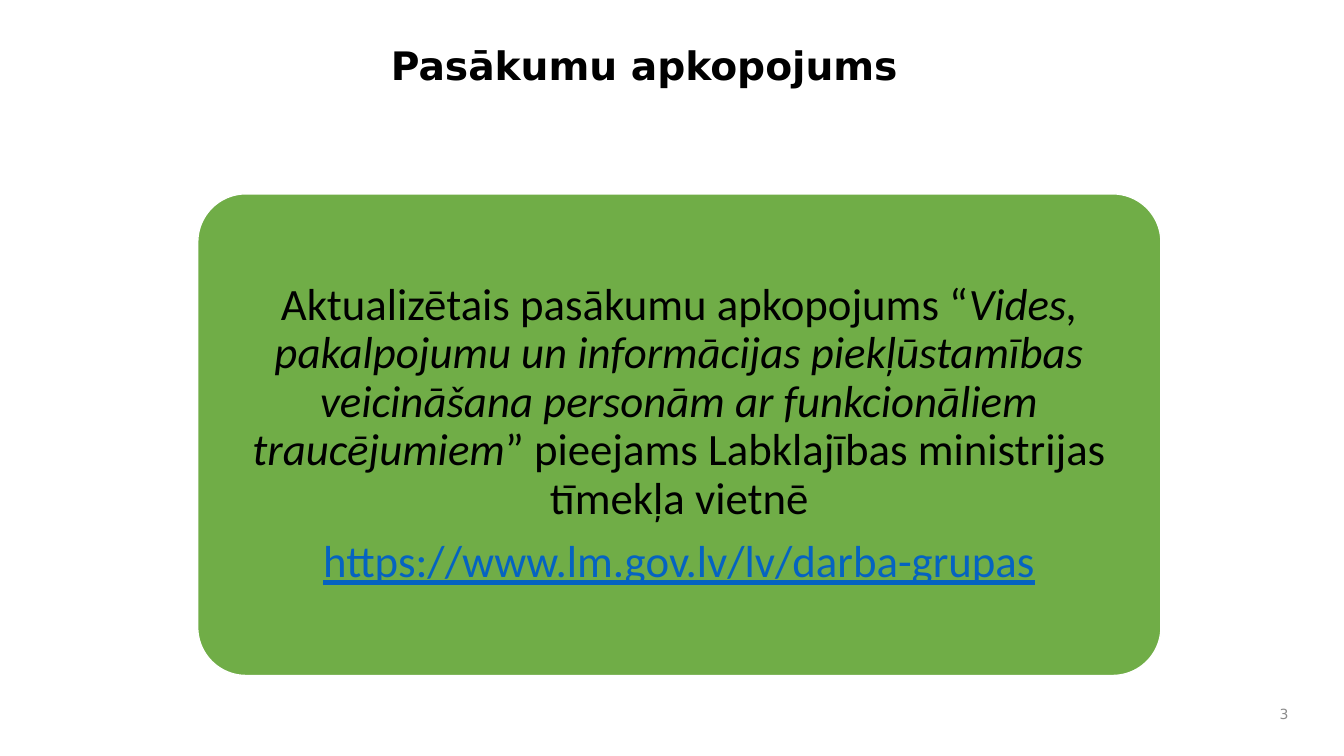
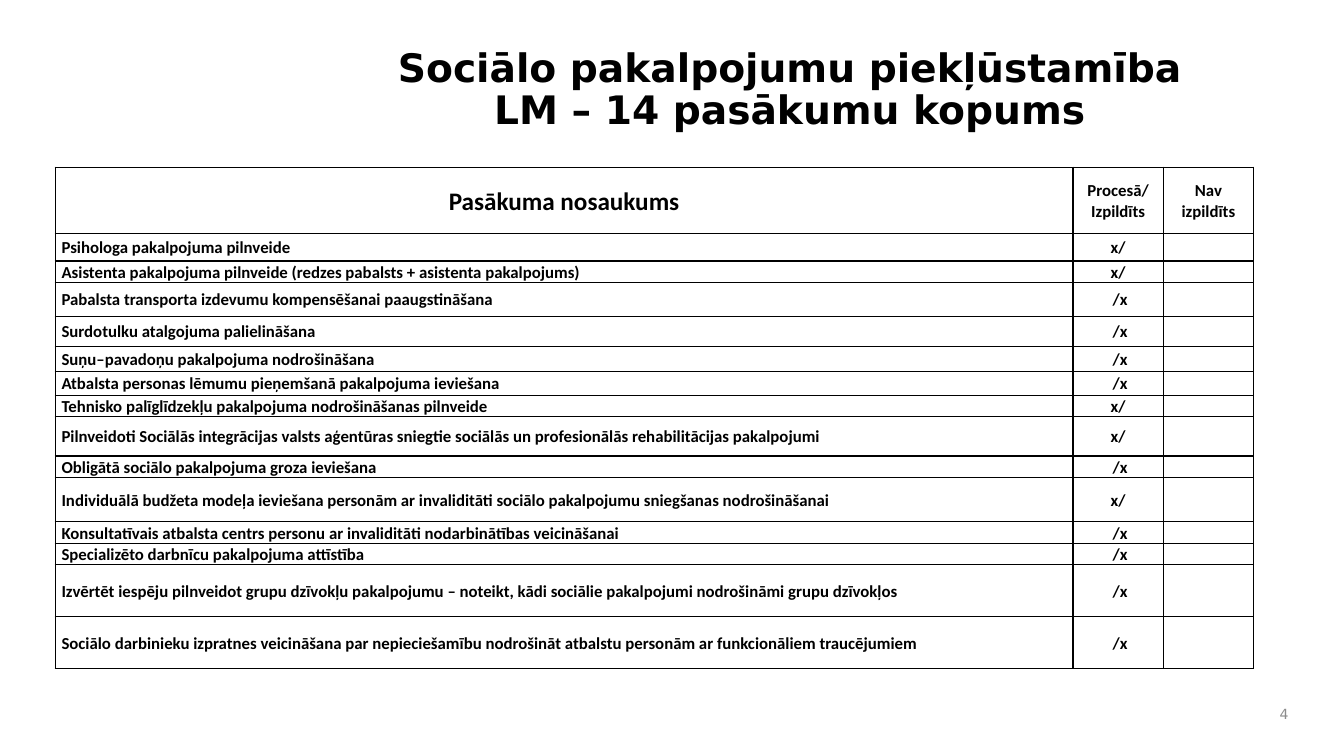
"""Build two slides on accessibility measures: a summary panel and a status table."""
import dataclasses

import lxml.etree
import pptx
import pptx.dml.color
import pptx.enum.shapes
import pptx.enum.text
import pptx.oxml.ns
import pptx.util

Pt = pptx.util.Pt
Align = pptx.enum.text.PP_ALIGN
Anchor = pptx.enum.text.MSO_ANCHOR
qn = pptx.oxml.ns.qn


@dataclasses.dataclass(frozen=True)
class Theme:
    heading_font: str = "DejaVu Sans"
    body_font: str = "Calibri"
    black: str = "000000"
    white: str = "FFFFFF"
    green: str = "70AD47"
    link: str = "0563C1"
    grey: str = "8C8C8C"
    title_size: int = 28
    panel_size: int = 32
    header_size: int = 18
    cell_size: int = 12
    number_size: int = 10


theme = Theme()


def style(para, font, size, color, bold=False, align=Align.LEFT, spacing=1.0):
    para.alignment = align
    para.line_spacing = spacing
    for span in para.runs:
        span.font.name = font
        span.font.size = Pt(size)
        span.font.bold = bold
        span.font.color.rgb = pptx.dml.color.RGBColor.from_string(color)


def add_page(deck, title, bounds, align, anchor, number):
    page = deck.slides.add_slide(deck.slide_layouts[5])
    heading = page.shapes.title
    heading.left, heading.top, heading.width, heading.height = map(Pt, bounds)
    frame = heading.text_frame
    frame.text = title
    frame.auto_size = pptx.enum.text.MSO_AUTO_SIZE.NONE
    frame.vertical_anchor = anchor
    for para in frame.paragraphs:
        style(para, theme.heading_font, theme.title_size, theme.black, True, align, 0.9)
    box = page.shapes.add_textbox(Pt(896), Pt(498), Pt(31.5), Pt(24))
    box.text_frame.word_wrap = True
    box.text_frame.vertical_anchor = Anchor.MIDDLE
    box.text_frame.text = str(number)
    style(box.text_frame.paragraphs[0], theme.heading_font, theme.number_size,
          theme.grey, align=Align.RIGHT)
    return page


deck = pptx.Presentation()
deck.slide_width, deck.slide_height = Pt(960), Pt(540)

page = add_page(deck, "Pasākumu apkopojums", (272, 30, 640, 81.5),
                Align.LEFT, Anchor.TOP, 3)
panel = page.shapes.add_shape(pptx.enum.shapes.MSO_SHAPE.ROUNDED_RECTANGLE,
                              Pt(141.25), Pt(138.5), Pt(688), Pt(344))
panel.adjustments[0] = 0.1
panel.shadow.inherit = False
panel.fill.solid()
panel.fill.fore_color.rgb = pptx.dml.color.RGBColor.from_string(theme.green)
panel.line.color.rgb = pptx.dml.color.RGBColor.from_string(theme.white)
panel.line.width = Pt(1)
frame = panel.text_frame
frame.word_wrap = True
frame.vertical_anchor = Anchor.MIDDLE
frame.margin_left = frame.margin_right = Pt(5)
frame.margin_top = frame.margin_bottom = Pt(3)

summary = frame.paragraphs[0]
for text, italic in (
    ("Aktualizētais pasākumu apkopojums “", False),
    ("Vides, pakalpojumu un informācijas piekļūstamības veicināšana "
     "personām ar funkcionāliem traucējumiem", True),
    ("” pieejams Labklajības ministrijas tīmekļa vietnē", False),
):
    span = summary.add_run()
    span.text = text
    span.font.italic = italic
summary.space_after = Pt(11)
address = frame.add_paragraph()
address.text = "https://www.lm.gov.lv/lv/darba-grupas"
for para, color in ((summary, theme.black), (address, theme.link)):
    style(para, theme.body_font, theme.panel_size, color, align=Align.CENTER, spacing=0.9)
address.runs[0].font.underline = True

page = add_page(deck, "Sociālo pakalpojumu piekļūstamība\nLM – 14 pasākumu kopums",
                (215.5, 18, 697, 93.5), Align.CENTER, Anchor.MIDDLE, 4)
ongoing, done = "x/", " /x"
rows = [
    (47.5, "Pasākuma nosaukums", "Procesā/ Izpildīts", "Nav izpildīts"),
    (19.5, "Psihologa pakalpojuma pilnveide", ongoing, ""),
    (15, "Asistenta pakalpojuma pilnveide (redzes pabalsts + asistenta pakalpojums)", ongoing, ""),
    (24, "Pabalsta transporta izdevumu kompensēšanai paaugstināšana", done, ""),
    (21.5, "Surdotulku atalgojuma palielināšana", done, ""),
    (18, "Suņu–pavadoņu pakalpojuma nodrošināšana", done, ""),
    (17, "Atbalsta personas lēmumu pieņemšanā pakalpojuma ieviešana", done, ""),
    (15, "Tehnisko palīglīdzekļu pakalpojuma nodrošināšanas pilnveide", ongoing, ""),
    (28, "Pilnveidoti Sociālās integrācijas valsts aģentūras sniegtie sociālās un "
         "profesionālās rehabilitācijas pakalpojumi", ongoing, ""),
    (15, "Obligātā sociālo pakalpojuma groza ieviešana", done, ""),
    (31.5, "Individuālā budžeta modeļa ieviešana personām ar invaliditāti sociālo "
           "pakalpojumu sniegšanas nodrošināšanai", ongoing, ""),
    (15, "Konsultatīvais atbalsta centrs personu ar invaliditāti nodarbinātības veicināšanai",
     done, ""),
    (15, "Specializēto darbnīcu pakalpojuma attīstība", done, ""),
    (37, "Izvērtēt iespēju pilnveidot grupu dzīvokļu pakalpojumu – noteikt, kādi sociālie "
         "pakalpojumi nodrošināmi grupu dzīvokļos", done, ""),
    (37, "Sociālo darbinieku izpratnes veicināšana par nepieciešamību nodrošināt atbalstu "
         "personām ar funkcionāliem traucējumiem", done, ""),
]
widths = (727, 64.5, 64.5)
table = page.shapes.add_table(len(rows), len(widths), Pt(39.5), Pt(119.5),
                              Pt(sum(widths)), Pt(sum(row[0] for row in rows))).table
table.first_row = table.horz_banding = False
for column, width in zip(table.columns, widths):
    column.width = Pt(width)

for row_index, (height, *texts) in enumerate(rows):
    table.rows[row_index].height = Pt(height)
    for column_index, text in enumerate(texts):
        cell = table.cell(row_index, column_index)
        cell.text = text
        cell.vertical_anchor = Anchor.MIDDLE
        cell.margin_left = cell.margin_right = Pt(4.5)
        cell.margin_top = cell.margin_bottom = 0
        is_name = column_index == 0
        size = theme.header_size if is_name and row_index == 0 else theme.cell_size
        align = Align.JUSTIFY if is_name and row_index else Align.CENTER
        para = cell.text_frame.paragraphs[0]
        style(para, theme.body_font, size, theme.black, True, align, 1.07)
        if not text:
            lxml.etree.SubElement(para._p, qn("a:endParaRPr"), sz=str(size * 100))
        properties = cell._tc.get_or_add_tcPr()
        for side in ("a:lnL", "a:lnR", "a:lnT", "a:lnB"):
            border = lxml.etree.SubElement(properties, qn(side), w=str(Pt(1)))
            fill = lxml.etree.SubElement(border, qn("a:solidFill"))
            lxml.etree.SubElement(fill, qn("a:srgbClr"), val=theme.black)
        cell.fill.background()

deck.save("out.pptx")
